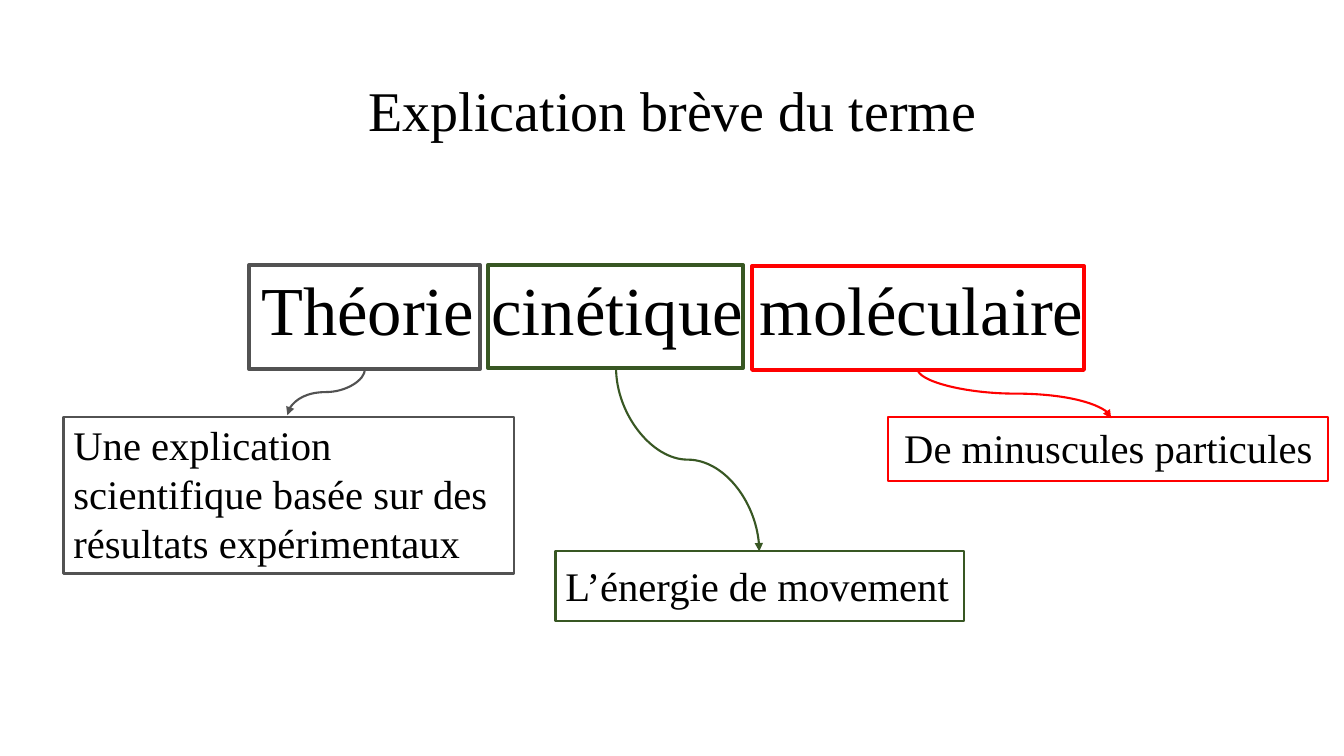
from dataclasses import dataclass

from lxml import etree
from pptx import Presentation
from pptx.dml.color import RGBColor
from pptx.enum.shapes import MSO_CONNECTOR, MSO_SHAPE
from pptx.enum.text import MSO_ANCHOR, PP_ALIGN
from pptx.oxml.ns import qn
from pptx.util import Inches, Pt

BLACK = RGBColor(0x00, 0x00, 0x00)
GREY = RGBColor(0x52, 0x52, 0x52)
GREEN = RGBColor(0x38, 0x57, 0x23)
RED = RGBColor(0xFF, 0x00, 0x00)
FONT = "Times New Roman"
RECT, CURVE = MSO_SHAPE.RECTANGLE, MSO_CONNECTOR.CURVE
CENTER, LEFT = PP_ALIGN.CENTER, PP_ALIGN.LEFT
TOP, MIDDLE = MSO_ANCHOR.TOP, MSO_ANCHOR.MIDDLE

Box = tuple[float, float, float, float]  # left, top, width, height
Point = tuple[float, float]


@dataclass
class Label:
    text: str
    box: Box
    size: int
    align: PP_ALIGN = LEFT
    anchor: MSO_ANCHOR = TOP
    spacing: float = 1.0
    wrap: bool = True


@dataclass
class Term:
    color: RGBColor
    word_box: Box
    meaning_box: Box
    start: Point
    end: Point


LABELS = [
    Label("Explication brève du terme", (0.92, 0.4, 11.5, 1.45), 40, CENTER, MIDDLE, 0.9),
    Label("Théorie cinétique moléculaire", (2.11, 2.69, 9.12, 1.01), 49, CENTER, TOP, 0.9),
    Label("Une explication scientifique basée sur des résultats expérimentaux",
          (0.63, 4.12, 4.43, 1.57), 29),
    Label("L’énergie de movement", (5.51, 5.52, 4.05, 0.59), 29, wrap=False),
    Label("De minuscules particules", (8.87, 4.15, 4.3, 0.59), 29, wrap=False),
]

TERMS = [
    Term(GREY, (2.47, 2.63, 2.29, 1.03), (0.63, 4.14, 4.47, 1.55), (3.62, 3.66), (2.85, 4.12)),
    Term(GREEN, (4.84, 2.63, 2.53, 1.02), (5.51, 5.47, 4.05, 0.69), (6.11, 3.65), (7.53, 5.47)),
    Term(RED, (7.46, 2.64, 3.29, 1.03), (8.81, 4.14, 4.36, 0.63), (9.1, 3.66), (11.02, 4.15)),
]


def add_label(s, label: Label) -> None:
    tf = s.shapes.add_textbox(*map(Inches, label.box)).text_frame
    tf.word_wrap = label.wrap
    tf.vertical_anchor = label.anchor
    p = tf.paragraphs[0]
    p.text = label.text
    p.alignment = label.align
    p.line_spacing = label.spacing
    p.font.name = FONT
    p.font.size = Pt(label.size)
    p.font.color.rgb = BLACK


def add_frame(s, box: Box, color: RGBColor, width: float) -> None:
    sp = s.shapes.add_shape(RECT, *map(Inches, box))
    sp.shadow.inherit = False
    sp.fill.background()
    sp.line.color.rgb = color
    sp.line.width = Pt(width)


def add_curved_arrow(s, start: Point, end: Point, color: RGBColor) -> None:
    """Draw an S-curve that leaves and arrives vertically: a quarter-turned connector."""
    (x1, y1), (x2, y2) = start, end
    cx, cy = (x1 + x2) / 2, (y1 + y2) / 2
    half_h = abs(x2 - x1) / 2
    to_right = x2 > x1
    half_w = (y2 - y1) / 2 * (-1 if to_right else 1)
    c = s.shapes.add_connector(CURVE, Inches(cx - half_w), Inches(cy - half_h),
                               Inches(cx + half_w), Inches(cy + half_h))
    c.line.color.rgb = color
    c.line.width = Pt(1.5)
    sp_pr = c._element.spPr
    sp_pr.find(qn("a:xfrm")).set("rot", str((270 if to_right else 90) * 60000))
    etree.SubElement(sp_pr.find(qn("a:ln")), qn("a:tailEnd"), type="triangle")
    etree.SubElement(sp_pr, qn("a:effectLst"))


def main() -> None:
    prs = Presentation()
    prs.slide_width, prs.slide_height = Inches(13.33), Inches(7.5)
    s = prs.slides.add_slide(prs.slide_layouts[6])

    # Title, term and meanings
    for label in LABELS:
        add_label(s, label)

    # Each word framed and linked to its meaning
    for term in TERMS:
        add_frame(s, term.word_box, term.color, 3)
        add_frame(s, term.meaning_box, term.color, 1.5)
        add_curved_arrow(s, term.start, term.end, term.color)

    prs.save("out.pptx")


if __name__ == "__main__":
    main()
